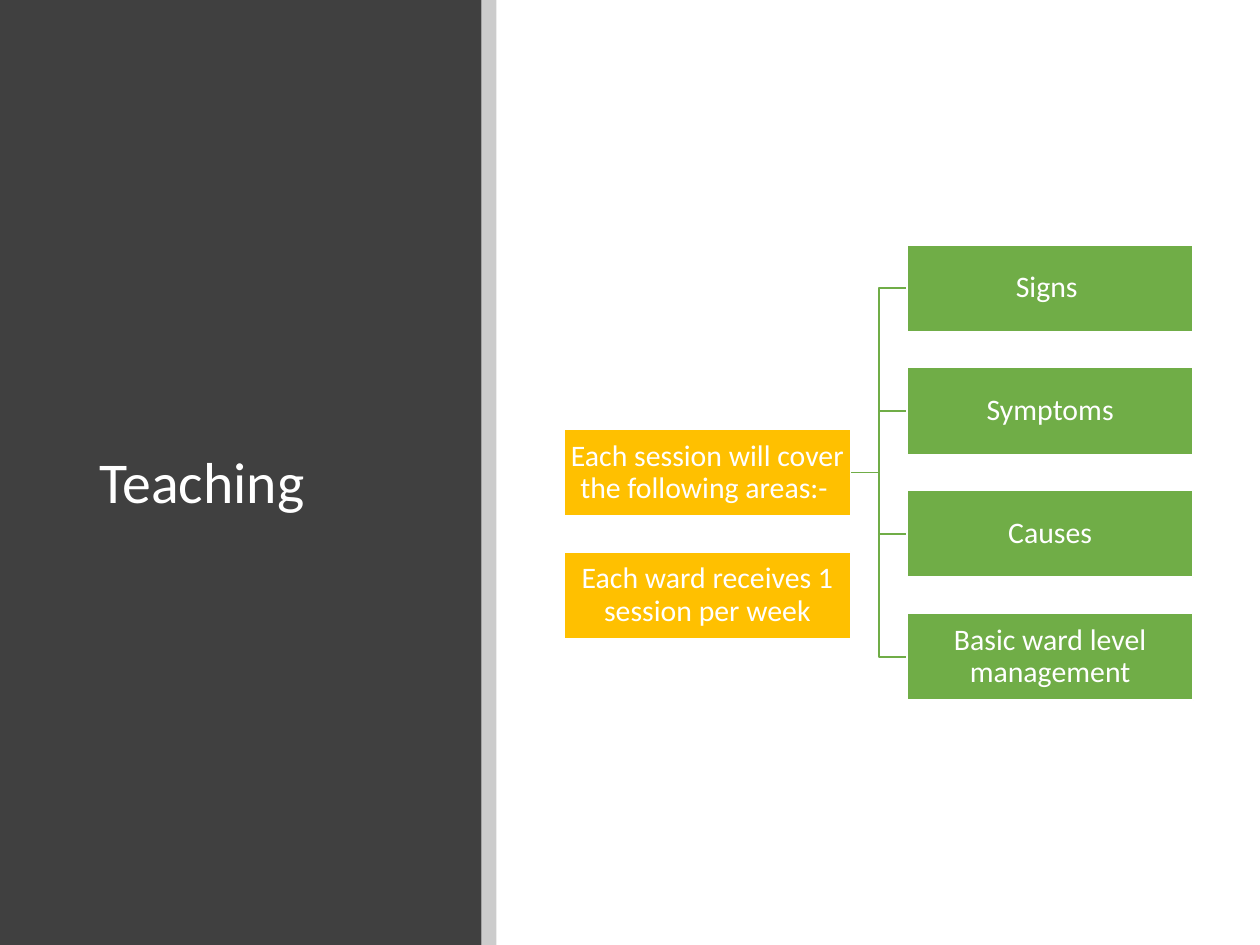
import pptx
import pptx.util
import pptx.dml.color
import pptx.enum.shapes
import pptx.enum.text
import pptx.oxml
import pptx.oxml.ns
from pptx.util import Inches, Pt

RGBColor = pptx.dml.color.RGBColor
WHITE = RGBColor(0xFF, 0xFF, 0xFF)
CHARCOAL = RGBColor(0x40, 0x40, 0x40)
BLACK = RGBColor(0, 0, 0)
AMBER = RGBColor(0xFF, 0xC0, 0x00)
GREEN = RGBColor(0x70, 0xAD, 0x47)

TITLE = "Teaching"
STATEMENTS = ["Each session will cover the following areas:- ",
              "Each ward receives 1 session per week"]
AREAS = ["Signs ", "Symptoms", "Causes", "Basic ward level management"]

WIDTH, HEIGHT = 10, 7.5
PANEL_W, STRIP_W = 3.82, 0.12
BOX_W, BOX_H = 2.27, 0.69
COLUMN_X, COLUMN_STEP = 4.48, 2.72
ROW_STEP = 0.975
MIDDLE = HEIGHT / 2


def set_text(sp, text, size, align, margin=None, space_after=0):
    tf = sp.text_frame
    tf.word_wrap = True
    tf.auto_size = pptx.enum.text.MSO_AUTO_SIZE.NONE
    tf.vertical_anchor = pptx.enum.text.MSO_ANCHOR.MIDDLE
    if margin is not None:
        tf.margin_left = tf.margin_right = Inches(margin)
        tf.margin_top = tf.margin_bottom = Inches(margin)
    p = tf.paragraphs[0]
    p.alignment = align
    p.line_spacing = 0.9
    p.space_after = Pt(space_after)
    r = p.add_run()
    r.text = text
    r.font.name = "Calibri"
    r.font.size = Pt(size)
    r.font.color.rgb = WHITE


def add_rect(s, x, y, w, h, fill, line=None):
    sp = s.shapes.add_shape(pptx.enum.shapes.MSO_SHAPE.RECTANGLE,
                            Inches(x), Inches(y), Inches(w), Inches(h))
    sp.shadow.inherit = False
    sp.fill.solid()
    sp.fill.fore_color.rgb = fill
    if line is None:
        sp.line.fill.background()
    else:
        sp.line.color.rgb = line
        sp.line.width = Pt(1)
    return sp


def set_opacity(sp, percent):
    color = sp.fill._xPr.find(".//" + pptx.oxml.ns.qn("a:srgbClr"))
    alpha = pptx.oxml.parse_xml(
        f'<a:alpha {pptx.oxml.ns.nsdecls("a")} val="{percent * 1000}"/>')
    color.append(alpha)


def add_column(s, texts, column, first_row, fill):
    """Stack boxes in a column; first_row counts row steps from the slide's middle."""
    boxes = []
    for i, text in enumerate(texts):
        y = MIDDLE + (first_row + i) * ROW_STEP - BOX_H / 2
        sp = add_rect(s, COLUMN_X + column * COLUMN_STEP, y, BOX_W, BOX_H, fill, WHITE)
        set_text(sp, text, 17, pptx.enum.text.PP_ALIGN.CENTER,
                 margin=0.01, space_after=6)
        boxes.append(sp)
    return boxes


def join(s, parent, child):
    """Run an elbow from the parent's right side to the child's left side."""
    c = s.shapes.add_connector(pptx.enum.shapes.MSO_CONNECTOR.ELBOW, 0, 0, 0, 0)
    c.begin_connect(parent, 3)
    c.end_connect(child, 1)
    c.line.color.rgb = GREEN
    c.line.width = Pt(1)
    c.element.spPr.append(pptx.oxml.parse_xml(
        f'<a:effectLst {pptx.oxml.ns.nsdecls("a")}/>'))
    parent.element.addprevious(c.element)


def main():
    prs = pptx.Presentation()
    prs.slide_width, prs.slide_height = Inches(WIDTH), Inches(HEIGHT)
    s = prs.slides.add_slide(prs.slide_layouts[5])

    title = s.shapes.title
    title.left, title.top = Inches(0.69), Inches(0.89)
    title.width, title.height = Inches(2.74), Inches(5.91)
    set_text(title, TITLE, 33, pptx.enum.text.PP_ALIGN.LEFT)

    panel = add_rect(s, 0, 0, PANEL_W, HEIGHT, CHARCOAL)
    title.element.addprevious(panel.element)
    strip = add_rect(s, PANEL_W, 0, STRIP_W, HEIGHT, BLACK)
    set_opacity(strip, 20)

    statements = add_column(s, STATEMENTS, 0, 0, AMBER)
    areas = add_column(s, AREAS, 1, -(len(AREAS) - 1) / 2, GREEN)
    for area in areas:
        join(s, statements[0], area)

    prs.save("out.pptx")


if __name__ == "__main__":
    main()
